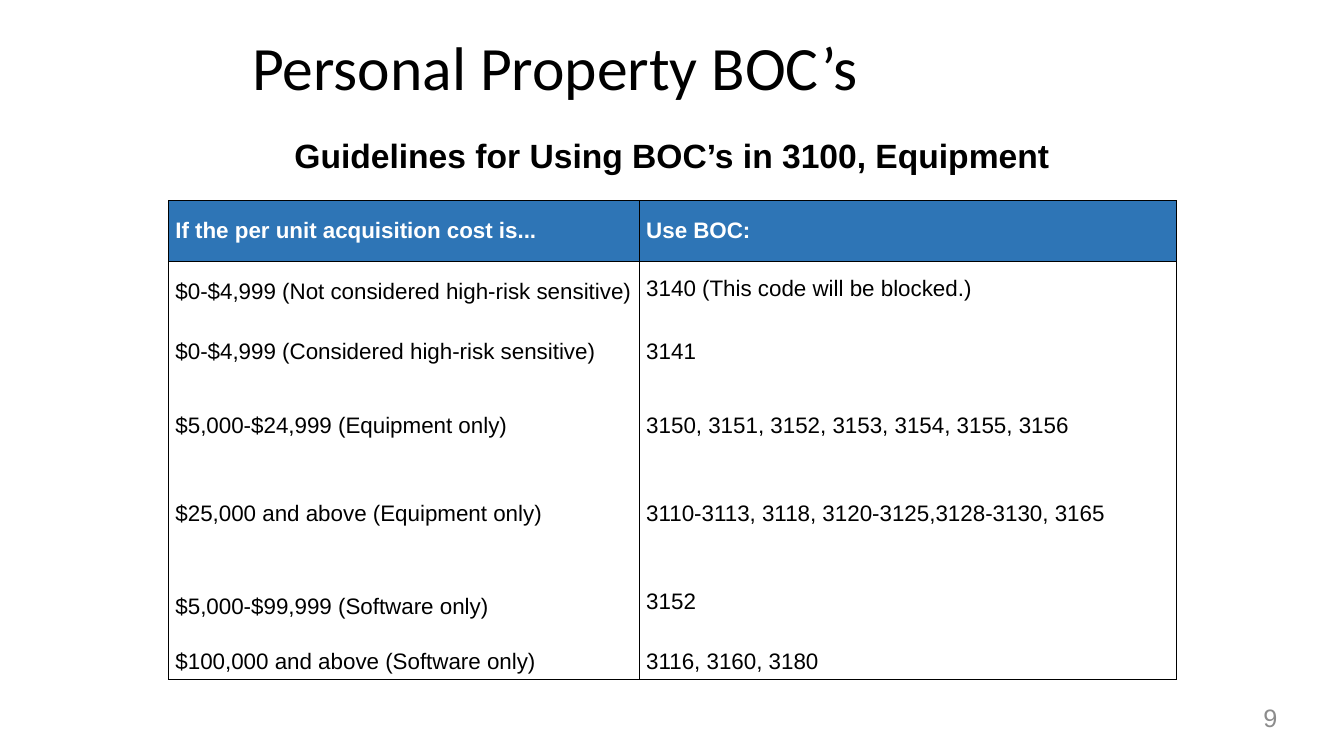
from dataclasses import dataclass

from lxml import etree
from pptx import Presentation
from pptx.dml.color import RGBColor
from pptx.enum.text import MSO_ANCHOR, MSO_AUTO_SIZE, PP_ALIGN
from pptx.oxml.ns import qn
from pptx.util import Pt

LEFT, CENTER, RIGHT = PP_ALIGN.LEFT, PP_ALIGN.CENTER, PP_ALIGN.RIGHT
TOP, MIDDLE = MSO_ANCHOR.TOP, MSO_ANCHOR.MIDDLE
NO_AUTOFIT = MSO_AUTO_SIZE.NONE
EMU_PER_PX = 9144


@dataclass(frozen=True)
class Theme:
    heading_font: str = "Calibri"
    body_font: str = "Arial"
    black: str = "000000"
    white: str = "FFFFFF"
    header: str = "2E75B6"
    muted: str = "8C8C8C"
    title_size: int = 44
    subtitle_size: int = 24
    table_size: int = 16
    number_size: int = 18
    border: float = 0.6


THEME = Theme()

COL_WIDTHS = [467, 533]
ROW_HEIGHTS = [60, 60, 60, 87, 87, 87, 34]
ROWS = [
    ("If the per unit acquisition cost is...", "Use BOC:"),
    ("$0-$4,999 (Not considered high-risk sensitive)", "3140 (This code will be blocked.)"),
    ("$0-$4,999 (Considered high-risk sensitive)", "3141"),
    ("$5,000-$24,999 (Equipment only)", "3150, 3151, 3152, 3153, 3154, 3155, 3156"),
    ("$25,000 and above (Equipment only)", "3110-3113, 3118, 3120-3125,3128-3130, 3165"),
    ("$5,000-$99,999 (Software only)", "3152"),
    ("$100,000 and above (Software only)", "3116, 3160, 3180"),
]
BLOCKED_CELL = (1, 1)
TOP_MARGINS = {(5, 0): 14, (5, 1): 5}


def px(n):
    return n * EMU_PER_PX


def style(p, size, color, font=THEME.body_font, bold=False, align=LEFT):
    p.alignment = align
    p.font.name = font
    p.font.size = Pt(size)
    p.font.bold = bold
    p.font.color.rgb = RGBColor.from_string(color)


def fill_frame(sp, box, text, anchor=TOP, **look):
    sp.left, sp.top, sp.width, sp.height = map(px, box)
    tf = sp.text_frame
    tf.word_wrap = True
    tf.auto_size = NO_AUTOFIT
    tf.vertical_anchor = anchor
    tf.margin_left = tf.margin_top = tf.margin_right = tf.margin_bottom = 0
    p = tf.paragraphs[0]
    p.text = text
    style(p, **look)


def add_text(s, box, text, **look):
    fill_frame(s.shapes.add_textbox(*map(px, box)), box, text, **look)


def set_borders(cell, sides):
    tcPr = cell._tc.get_or_add_tcPr()
    for side in "LRTB":
        ln = etree.SubElement(tcPr, qn(f"a:ln{side}"), w=str(int(Pt(THEME.border))))
        if side in sides:
            solid = etree.SubElement(ln, qn("a:solidFill"))
            etree.SubElement(solid, qn("a:srgbClr"), val=THEME.black)
        else:
            etree.SubElement(ln, qn("a:noFill"))


def format_cell(cell, row, col, text):
    header = row == 0
    sides = "LR" + "T" * (row <= 1) + "B" * (row in (0, len(ROWS) - 1))
    set_borders(cell, sides)
    cell.fill.solid()
    cell.fill.fore_color.rgb = RGBColor.from_string(THEME.header if header else THEME.white)
    cell.margin_left = cell.margin_right = px(7)
    cell.margin_top = px(TOP_MARGINS.get((row, col), 3))
    cell.margin_bottom = px(3)
    cell.vertical_anchor = MIDDLE
    p = cell.text_frame.paragraphs[0]
    p.text = text
    if (row, col) == BLOCKED_CELL:
        cell.vertical_anchor = TOP
        p.line_spacing = 1.5
        p.space_after = Pt(12)
    style(p, THEME.table_size, THEME.white if header else THEME.black, bold=header)


def add_boc_table(s, left, top):
    frame = s.shapes.add_table(len(ROWS), len(COL_WIDTHS), px(left), px(top),
                               px(sum(COL_WIDTHS)), px(sum(ROW_HEIGHTS)))
    table = frame.table
    table.horz_banding = False
    for column, width in zip(table.columns, COL_WIDTHS):
        column.width = px(width)
    for i, (height, texts) in enumerate(zip(ROW_HEIGHTS, ROWS)):
        table.rows[i].height = px(height)
        for j, text in enumerate(texts):
            format_cell(table.cell(i, j), i, j, text)


def main():
    prs = Presentation()
    prs.slide_width, prs.slide_height = px(1333), px(750)
    s = prs.slides.add_slide(prs.slide_layouts[5])
    fill_frame(s.shapes.title, (250, 28, 1035, 75), "Personal Property BOC’s", anchor=MIDDLE,
               size=THEME.title_size, color=THEME.black, font=THEME.heading_font)
    add_text(s, (78, 134, 1177, 39), "Guidelines for Using BOC’s in 3100, Equipment",
             size=THEME.subtitle_size, color=THEME.black, bold=True, align=CENTER)
    add_boc_table(s, 167, 199)
    add_text(s, (960, 697, 307, 30), "9",
             size=THEME.number_size, color=THEME.muted, align=RIGHT)
    prs.save("out.pptx")


if __name__ == "__main__":
    main()
